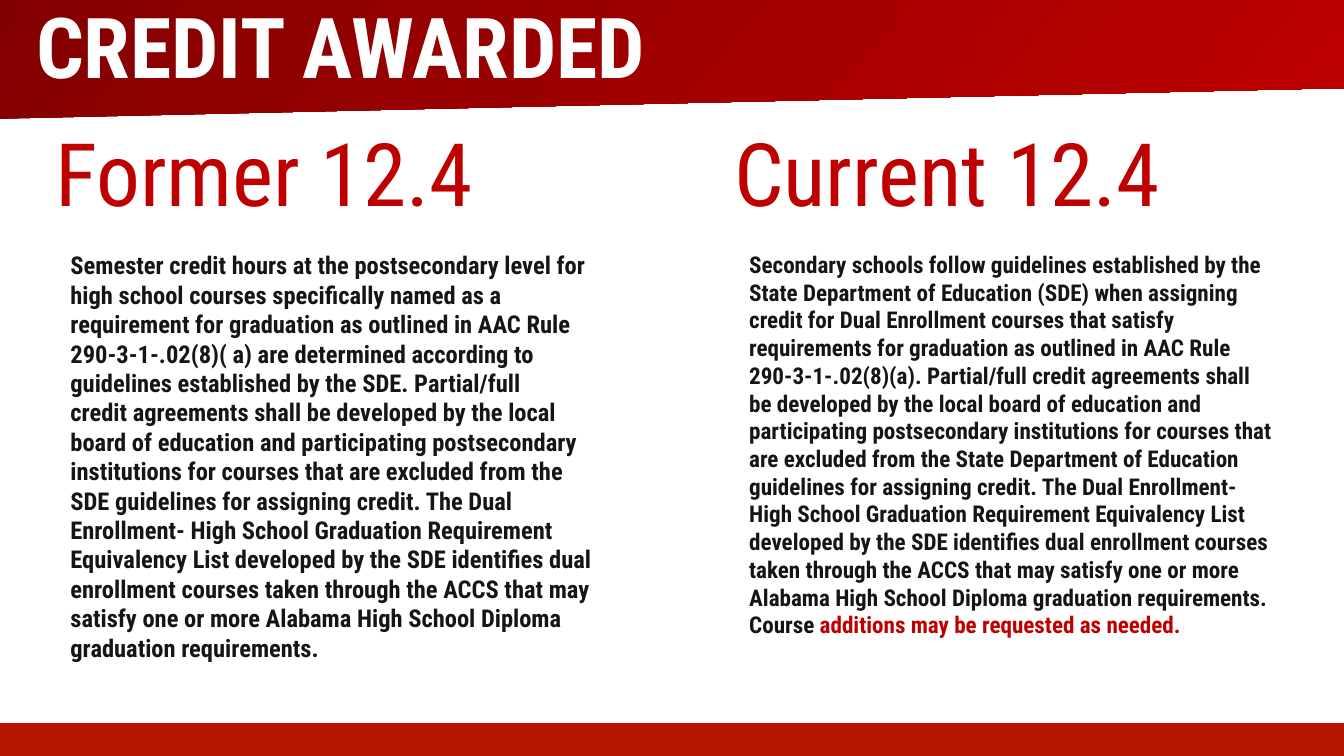
from pptx import Presentation
from pptx.dml.color import RGBColor
from pptx.enum.shapes import MSO_SHAPE
from pptx.enum.text import MSO_ANCHOR
from pptx.util import Cm, Pt

# Content
TITLE = "CREDIT AWARDED"
COLUMNS = [
    {
        "heading": "Former 12.4",
        "size": 35,
        "body": [
            [("Semester credit hours at the postsecondary level for high school courses "
              "specifically named as a requirement for graduation as outlined in AAC Rule "
              "290-3-1-.02(8)( a) are determined according to guidelines established by the "
              "SDE. Partial/full", "ink")],
            [("credit agreements shall be developed by the local board of education and "
              "participating postsecondary institutions for courses that are excluded from "
              "the SDE guidelines for assigning credit. The Dual Enrollment- High School "
              "Graduation Requirement Equivalency List developed by the SDE identifies dual "
              "enrollment courses taken through the ACCS that may satisfy one or more "
              "Alabama High School Diploma graduation requirements.", "ink")],
        ],
    },
    {
        "heading": "Current 12.4",
        "size": 33,
        "body": [
            [("Secondary schools follow guidelines established by the State Department of "
              "Education (SDE) when assigning credit for Dual Enrollment courses that satisfy "
              "requirements for graduation as outlined in AAC Rule 290-3-1-.02(8)(a). "
              "Partial/full credit agreements shall be developed by the local board of "
              "education and participating postsecondary institutions for courses that are "
              "excluded from the State Department of Education guidelines for assigning "
              "credit. The Dual Enrollment- High School Graduation Requirement Equivalency "
              "List developed by the SDE identifies dual enrollment courses taken through the "
              "ACCS that may satisfy one or more Alabama High School Diploma graduation "
              "requirements. Course ", "ink"),
             ("additions may be requested as needed.", "red")],
        ],
    },
]

THEME = {
    "font": "Roboto Condensed",
    "title_size": 120,
    "heading_size": 125,
    "white": RGBColor(0xFF, 0xFF, 0xFF),
    "ink": RGBColor(0x15, 0x15, 0x15),
    "red": RGBColor(0xBF, 0x00, 0x00),
    "footer": RGBColor(0xB4, 0x16, 0x00),
    "banner": [RGBColor(0x7F, 0x00, 0x00), RGBColor(0xC0, 0x00, 0x00)],
}

# Layout in centimetres
WIDTH, HEIGHT = 67.74, 38.1
COLUMN_LEFT, COLUMN_STEP = 2.64, 34.21
CARD_TOP, CARD_WIDTH, CARD_HEIGHT = 11.71, 28.24, 22.99
CARD_PADDING = 0.76
BANNER_OUTLINE = [(70.69, 4.37), (-2.97, 6.05), (-2.97, -0.2), (70.69, -0.2), (70.69, -3.1)]

prs = Presentation()
prs.slide_width, prs.slide_height = Cm(WIDTH), Cm(HEIGHT)
slide = prs.slides.add_slide(prs.slide_layouts[6])


def add_block(left, top, width, height, color):
    block = slide.shapes.add_shape(MSO_SHAPE.RECTANGLE, Cm(left), Cm(top), Cm(width), Cm(height))
    block.shadow.inherit = False
    block.fill.solid()
    block.fill.fore_color.rgb = THEME[color]
    block.line.fill.background()


def add_text(paragraphs, *, at, size, bold=False, anchor=MSO_ANCHOR.TOP, inset=(0.15, 0.15)):
    """Each paragraph is a list of (words, theme colour) pairs."""
    frame = slide.shapes.add_textbox(*map(Cm, at)).text_frame
    frame.word_wrap = True
    frame.vertical_anchor = anchor
    frame.margin_left = frame.margin_right = Cm(inset[0])
    frame.margin_top = frame.margin_bottom = Cm(inset[1])
    for index, pieces in enumerate(paragraphs):
        paragraph = frame.add_paragraph() if index else frame.paragraphs[0]
        for words, color in pieces:
            run = paragraph.add_run()
            run.text = words
            run.font.name = THEME["font"]
            run.font.size = Pt(size)
            run.font.bold = bold
            run.font.color.rgb = THEME[color]


# Footer strip
add_block(-0.08, 36.45, 67.87, 1.65, "footer")

# Slanted banner
corners = [(Cm(x), Cm(y)) for x, y in BANNER_OUTLINE]
outline = slide.shapes.build_freeform(*corners[0])
outline.add_line_segments(corners[1:], close=True)
banner = outline.convert_to_shape()
banner.shadow.inherit = False
banner.line.fill.background()
banner.fill.gradient()
banner.fill.gradient_angle = 320
for stop, position, color in zip(banner.fill.gradient_stops, (0, 1), THEME["banner"]):
    stop.position = position
    stop.color.rgb = color

add_text([[(TITLE, "white")]], at=(1.57, -0.43, 58.42, 4.24),
         size=THEME["title_size"], bold=True, inset=(0.25, 0.13))

# Two columns: card, heading, rule text
for index, column in enumerate(COLUMNS):
    left = COLUMN_LEFT + index * COLUMN_STEP
    add_block(left, CARD_TOP, CARD_WIDTH, CARD_HEIGHT, "white")
    add_text([[(column["heading"], "red")]], at=(left, 5.82, 22.86, 5.64),
             size=THEME["heading_size"], anchor=MSO_ANCHOR.MIDDLE)
    add_text(column["body"], size=column["size"], bold=True,
             at=(left + CARD_PADDING, CARD_TOP + CARD_PADDING,
                 CARD_WIDTH - 2 * CARD_PADDING, CARD_HEIGHT - 2 * CARD_PADDING))

prs.save("out.pptx")
